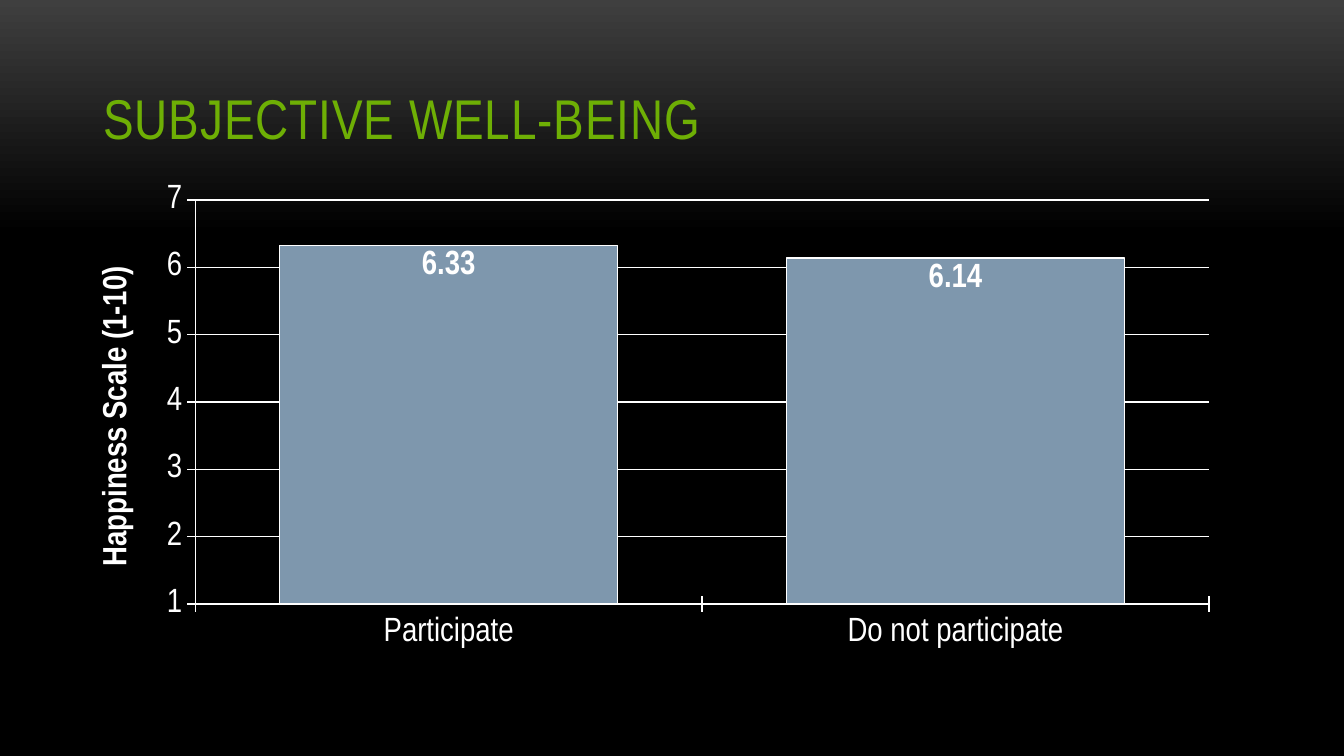
from lxml import etree
from pptx import Presentation
from pptx.chart.data import CategoryChartData
from pptx.dml.color import RGBColor
from pptx.enum.chart import XL_CHART_TYPE, XL_LABEL_POSITION, XL_TICK_MARK
from pptx.enum.text import MSO_ANCHOR, PP_ALIGN
from pptx.oxml.ns import qn
from pptx.util import Cm, Pt

COLUMNS = XL_CHART_TYPE.COLUMN_CLUSTERED
INSIDE_END = XL_LABEL_POSITION.INSIDE_END
CROSS = XL_TICK_MARK.CROSS
BOTTOM = MSO_ANCHOR.BOTTOM
LEFT = PP_ALIGN.LEFT

FONT = "Arial Narrow"
COLORS = {
    "glow": "3F3F3F",
    "background": "000000",
    "title": "6EAF05",
    "text": "FFFFFF",
    "bar": "7E97AD",
}


def color(name):
    return RGBColor.from_string(COLORS[name])


def format_font(font, size, color_name, bold=False):
    font.name = FONT
    font.size = Pt(size)
    font.bold = bold
    font.color.rgb = color(color_name)


def format_line(line):
    line.color.rgb = color("text")
    line.width = Pt(0.75)


def set_background(slide):
    fill = slide.background.fill
    fill.gradient()
    fill.gradient_angle = 270
    stops = (("glow", 0), ("background", 0.31))
    for stop, (name, position) in zip(fill.gradient_stops, stops):
        stop.color.rgb = color(name)
        stop.position = position


def set_title(slide, text):
    title = slide.shapes.title
    title.left, title.top = Cm(1.7), Cm(0.58)
    title.width, title.height = Cm(22.02), Cm(2.39)
    title.text_frame.vertical_anchor = BOTTOM
    paragraph = title.text_frame.paragraphs[0]
    paragraph.alignment = LEFT
    run = paragraph.add_run()
    run.text = text
    format_font(run.font, 30, "title")
    run.font._element.set("spc", "50")


def place_plot(chart, **fractions):
    plot_area = chart._chartSpace.chart.plotArea
    for old_layout in plot_area.findall(qn("c:layout")):
        plot_area.remove(old_layout)
    layout = etree.Element(qn("c:layout"))
    manual = etree.SubElement(layout, qn("c:manualLayout"))
    settings = {"layoutTarget": "inner", "xMode": "edge", "yMode": "edge", **fractions}
    for tag, value in settings.items():
        etree.SubElement(manual, qn(f"c:{tag}")).set("val", str(value))
    plot_area.insert(0, layout)


def format_axes(chart, title):
    for axis in (chart.category_axis, chart.value_axis):
        axis.major_tick_mark = CROSS
        format_line(axis.format.line)
        format_font(axis.tick_labels.font, 18, "text")
    axis = chart.value_axis
    axis.minimum_scale, axis.maximum_scale, axis.major_unit = 1, 7, 1
    axis.tick_labels.number_format = "0"
    axis.tick_labels.number_format_is_linked = False
    format_line(axis.major_gridlines.format.line)
    run = axis.axis_title.text_frame.paragraphs[0].add_run()
    run.text = title
    format_font(run.font, 18, "text", bold=True)


def format_columns(plot):
    plot.gap_width = 50
    plot.vary_by_categories = False
    series = plot.series[0]
    series.format.fill.solid()
    series.format.fill.fore_color.rgb = color("bar")
    format_line(series.format.line)
    labels = series.data_labels
    labels.show_value = True
    labels.position = INSIDE_END
    labels.number_format = "0.00"
    labels.number_format_is_linked = False
    format_font(labels.font, 18, "text", bold=True)


def add_happiness_chart(slide):
    data = CategoryChartData()
    data.categories = ["Participate", "Do not participate"]
    data.add_series("Series 1", (6.33, 6.14))
    frame = slide.shapes.add_chart(
        COLUMNS, Cm(1.27), Cm(3.33), Cm(22.02), Cm(9.09), data
    )
    chart = frame.chart
    chart.has_legend = False
    chart.has_title = False
    format_font(chart.font, 18, "text")
    format_axes(chart, "Happiness Scale (1-10)")
    format_columns(chart.plots[0])
    place_plot(chart, x=0.11, y=0.05, w=0.87, h=0.84)


def main():
    presentation = Presentation()
    presentation.slide_width = Cm(25.4)
    presentation.slide_height = Cm(14.29)
    slide = presentation.slides.add_slide(presentation.slide_layouts[5])
    set_background(slide)
    set_title(slide, "SUBJECTIVE WELL-BEING")
    add_happiness_chart(slide)
    presentation.save("out.pptx")


if __name__ == "__main__":
    main()
